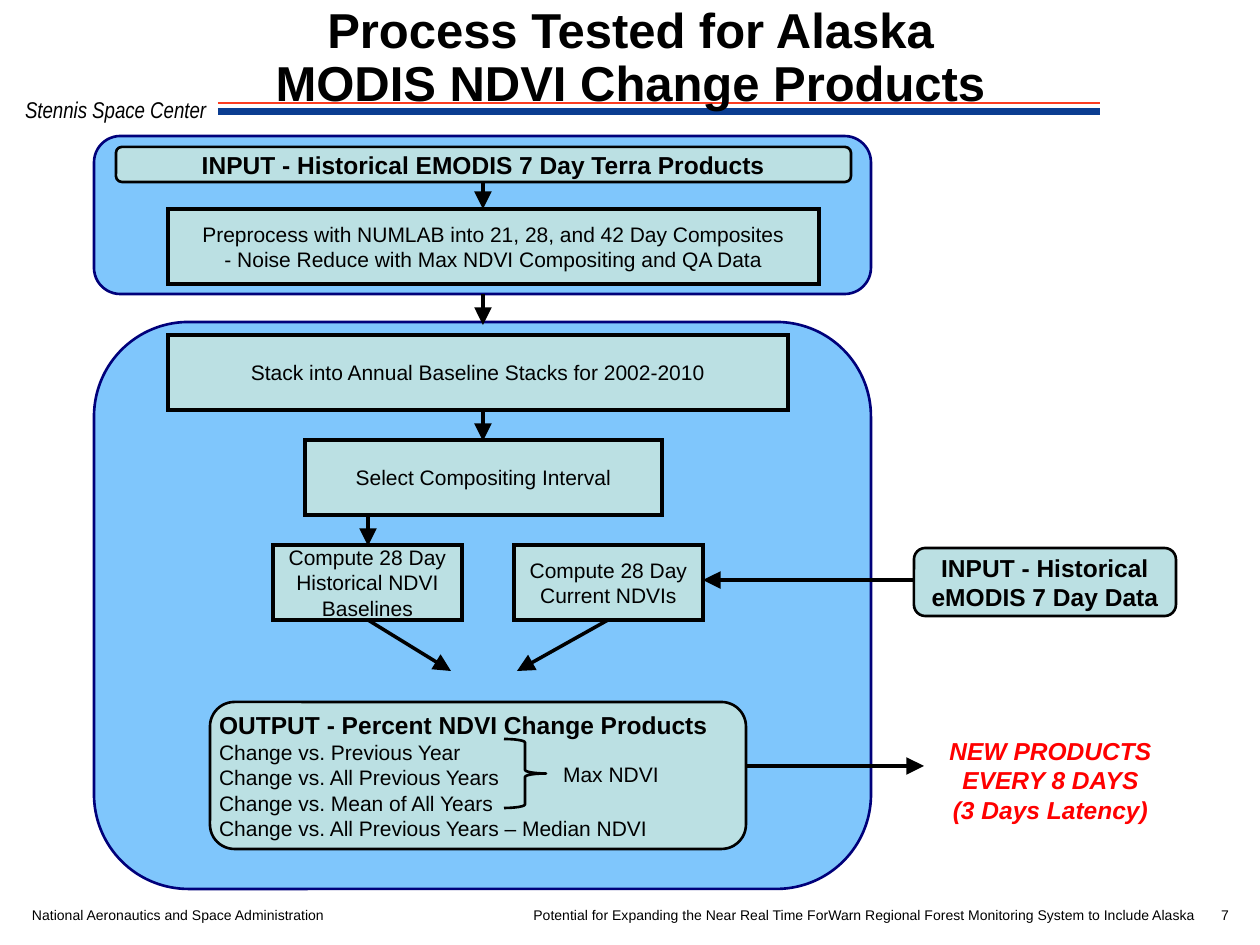
import pptx
import pptx.dml.color
import pptx.enum.shapes
import pptx.enum.text
import pptx.oxml
import pptx.oxml.ns
import pptx.util
from lxml import etree

EMU_PER_PX = 914400 / 126
BLACK = pptx.dml.color.RGBColor(0x00, 0x00, 0x00)
RED = pptx.dml.color.RGBColor(0xFF, 0x00, 0x00)
RULE_RED = pptx.dml.color.RGBColor(0xFC, 0x3D, 0x21)
RULE_BLUE = pptx.dml.color.RGBColor(0x0B, 0x3D, 0x91)
PANEL_BLUE = pptx.dml.color.RGBColor(0x00, 0x8F, 0xFA)
PANEL_EDGE = pptx.dml.color.RGBColor(0x00, 0x00, 0x7A)
BOX_TEAL = pptx.dml.color.RGBColor(0xBB, 0xE0, 0xE3)

SHAPE = pptx.enum.shapes.MSO_SHAPE
ALIGN = pptx.enum.text.PP_ALIGN
ANCHOR = pptx.enum.text.MSO_ANCHOR

FOOTER = {"name": "Arial", "size": pptx.util.Pt(8)}
CENTER_NAME = {"name": "Arial Narrow", "size": pptx.util.Pt(13), "italic": True}
TITLE = {"name": "Arial", "size": pptx.util.Pt(28), "bold": True}
BODY = {"name": "Arial", "size": pptx.util.Pt(12), "bold": False}
HEADING = {"name": "Arial", "size": pptx.util.Pt(14), "bold": True}
CALLOUT = {**HEADING, "italic": True}

STEPS = [
    (168, 209, 651, 75, ["Preprocess with NUMLAB into 21, 28, and 42 Day Composites",
                         "- Noise Reduce with Max NDVI Compositing and QA Data"]),
    (168, 335, 620, 75, ["Stack into Annual Baseline Stacks for 2002-2010"]),
    (305, 440, 357, 75, ["Select Compositing Interval"]),
    (273, 545, 189, 75, ["Compute 28 Day Historical NDVI Baselines"]),
    (514, 545, 189, 75, ["Compute 28 Day Current NDVIs"]),
]
INPUTS = [
    (116, 147, 735, 35, ["INPUT - Historical EMODIS 7 Day Terra Products"]),
    (914, 548, 262, 68, ["INPUT - Historical eMODIS 7 Day Data"]),
]
OUTPUT_LINES = [
    "OUTPUT - Percent NDVI Change Products",
    "Change vs. Previous Year",
    "Change vs. All Previous Years",
    "Change vs. Mean of All Years",
    "Change vs. All Previous Years – Median NDVI",
]
ARROWS = [
    (483, 182, 483, 209), (483, 294, 483, 325), (483, 410, 483, 441),
    (368, 515, 368, 546), (368, 620, 451, 671), (608, 620, 517, 671),
    (914, 580, 703, 580), (746, 766, 924, 766),
]


def px(*lengths):
    return [pptx.util.Emu(round(length * EMU_PER_PX)) for length in lengths]


def apply_format(target, values):
    for name, value in values.items():
        setattr(target, name, value)


def write_text(shape, lines, fonts, alignment, color=BLACK, margins=(0, 0), **frame_format):
    frame = shape.text_frame
    horizontal, vertical = px(*margins)
    apply_format(frame, {
        "margin_left": horizontal, "margin_right": horizontal,
        "margin_top": vertical, "margin_bottom": vertical, **frame_format,
    })
    frame.text = "\n".join(lines)
    for paragraph, font in zip(frame.paragraphs, fonts):
        paragraph.alignment = alignment
        apply_format(paragraph.font, font)
        paragraph.font.color.rgb = color


def add_label(slide, box, lines, font, alignment, color=BLACK, margins=(0, 0)):
    label = slide.shapes.add_textbox(*px(*box))
    write_text(label, lines, [font] * len(lines), alignment, color, margins, word_wrap=False)


def add_outlined_shape(slide, kind, box, line_color, width, fill=None):
    shape = slide.shapes.add_shape(kind, *px(*box))
    shape.shadow.inherit = False
    if fill is None:
        shape.fill.background()
    else:
        shape.fill.solid()
        shape.fill.fore_color.rgb = fill
    shape.line.color.rgb = line_color
    shape.line.width = pptx.util.Pt(width)
    return shape


def add_panel(slide, box):
    panel = add_outlined_shape(slide, SHAPE.ROUNDED_RECTANGLE, box, PANEL_EDGE, 1.5, PANEL_BLUE)
    color = panel.element.spPr.find(pptx.oxml.ns.qn("a:solidFill"))[0]
    etree.SubElement(color, pptx.oxml.ns.qn("a:alpha"), val="50000")


def add_step(slide, box, lines):
    step = add_outlined_shape(slide, SHAPE.FLOWCHART_PROCESS, box, BLACK, 2, BOX_TEAL)
    line = step.element.spPr.find(pptx.oxml.ns.qn("a:ln"))
    etree.SubElement(line, pptx.oxml.ns.qn("a:miter"), lim="800000")
    write_text(step, lines, [BODY] * len(lines), ALIGN.CENTER, margins=(9, 4),
               word_wrap=True, vertical_anchor=ANCHOR.MIDDLE)


def add_data_box(slide, box, lines, alignment):
    data_box = add_outlined_shape(slide, SHAPE.ROUNDED_RECTANGLE, box, BLACK, 1.5, BOX_TEAL)
    fonts = [HEADING] + [BODY] * (len(lines) - 1)
    write_text(data_box, lines, fonts, alignment, margins=(2, 1),
               word_wrap=True, vertical_anchor=ANCHOR.MIDDLE)


def add_line(slide, ends, color, width, arrow=False):
    connector = slide.shapes.add_connector(pptx.enum.shapes.MSO_CONNECTOR.STRAIGHT, *px(*ends))
    connector.line.color.rgb = color
    connector.line.width = pptx.util.Pt(width)
    properties = connector.element.spPr
    if arrow:
        line = properties.find(pptx.oxml.ns.qn("a:ln"))
        etree.SubElement(line, pptx.oxml.ns.qn("a:tailEnd"), type="triangle", w="lg", len="lg")
    etree.SubElement(properties, pptx.oxml.ns.qn("a:effectLst"))


def add_title(slide, text):
    title = slide.shapes.title
    left, top, width, height = px(174, 13, 913, 99)
    apply_format(title, {"left": left, "top": top, "width": width, "height": height})
    write_text(title, [text], [TITLE], ALIGN.CENTER, word_wrap=True,
               vertical_anchor=ANCHOR.BOTTOM, auto_size=pptx.enum.text.MSO_AUTO_SIZE.NONE)
    title.text_frame.paragraphs[0].line_spacing = 0.9
    slide.shapes.element.append(title.element)


def add_frame(slide):
    add_label(slide, (525, 907, 671, 16),
              ["Potential for Expanding the Near Real Time ForWarn Regional Forest "
               "Monitoring System to Include Alaska"], FOOTER, ALIGN.RIGHT)
    add_label(slide, (1211, 907, 18, 16), ["7"], FOOTER, ALIGN.RIGHT)
    add_label(slide, (32, 907, 295, 16), ["National Aeronautics and Space Administration"],
              FOOTER, ALIGN.LEFT)
    add_label(slide, (25, 96, 181, 28), ["Stennis Space Center"], CENTER_NAME, ALIGN.LEFT)
    add_line(slide, (218, 103, 1100, 103), RULE_RED, 1)
    add_line(slide, (218, 112, 1100, 112), RULE_BLUE, 4)


def add_flow(slide):
    for panel in [(94, 136, 777, 158), (94, 322, 777, 567)]:
        add_panel(slide, panel)
    for *box, lines in STEPS:
        add_step(slide, box, lines)
    for *box, lines in INPUTS:
        add_data_box(slide, box, lines, ALIGN.CENTER)
    add_data_box(slide, (210, 702, 536, 147), OUTPUT_LINES, ALIGN.LEFT)
    add_outlined_shape(slide, SHAPE.RIGHT_BRACE, (504, 739, 42, 69), BLACK, 1.5)
    add_label(slide, (550, 756, 122, 38), ["Max NDVI"], BODY, ALIGN.CENTER, margins=(13, 6))
    add_label(slide, (936, 730, 229, 102),
              ["NEW PRODUCTS", "EVERY 8 DAYS", "(3 Days Latency)"],
              CALLOUT, ALIGN.CENTER, RED, (13, 6))
    for ends in ARROWS:
        add_line(slide, ends, BLACK, 2, arrow=True)


def main():
    presentation = pptx.Presentation()
    presentation.slide_width, presentation.slide_height = px(1260, 945)
    slide = presentation.slides.add_slide(presentation.slide_layouts[5])
    add_frame(slide)
    add_title(slide, "Process Tested for Alaska\vMODIS NDVI Change Products")
    add_flow(slide)
    presentation.save("out.pptx")


if __name__ == "__main__":
    main()
